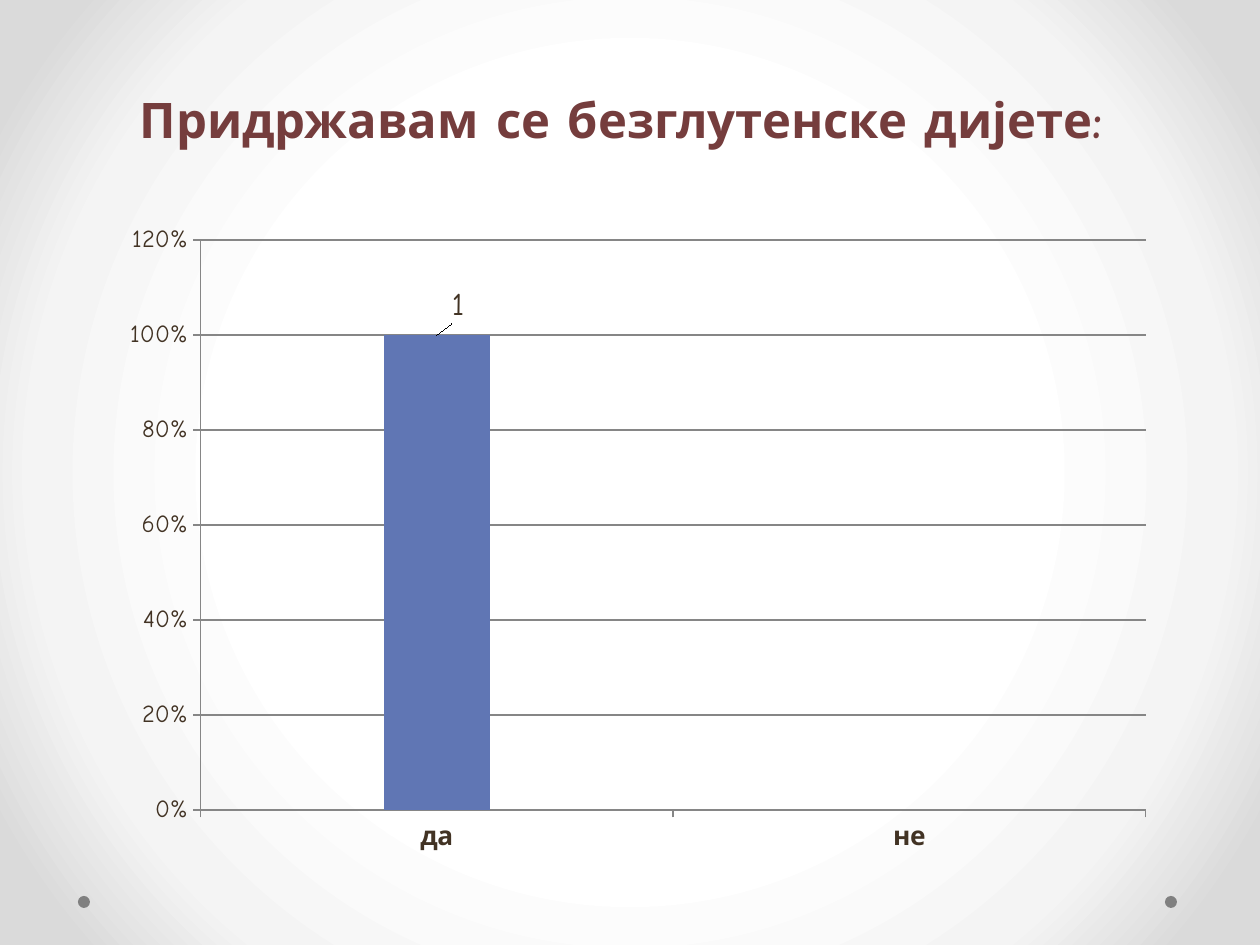
"""Build the slide on keeping a gluten-free diet, with its column chart."""
from dataclasses import dataclass
from lxml.etree import SubElement
from pptx import Presentation
from pptx.chart.data import CategoryChartData
from pptx.dml.color import RGBColor
from pptx.enum.chart import XL_CHART_TYPE, XL_LABEL_POSITION, XL_TICK_MARK
from pptx.enum.shapes import MSO_SHAPE
from pptx.enum.text import MSO_ANCHOR, PP_ALIGN
from pptx.oxml.ns import qn
from pptx.util import Emu, Pt


@dataclass(frozen=True)
class Theme:
    font: str = "Comic Neue"
    chart_font: str = "Vollkorn"
    title: str = "753D3D"
    text: str = "423324"
    chart_text: str = "000000"
    bar: str = "6076B4"
    line: str = "868686"
    dot: str = "808080"
    backdrop: tuple = ((50, "FFFFFF"), (76, "F4F4F4"), (92, "DADADA"))
    title_size: int = 28
    label_size: int = 18
    category_size: int = 15
    value_size: int = 14


def px(length):
    return Emu(round(length * 914400 / 126))


def style(font, size, color, name=Theme.font, bold=False):
    font.name, font.size, font.bold = name, Pt(size), bold
    font.color.rgb = RGBColor.from_string(color)


theme = Theme()
deck = Presentation()
deck.slide_width, deck.slide_height = px(1260), px(945)
page = deck.slides.add_slide(deck.slide_layouts[6])

page.background.fill.gradient()
gradient = page.element.find(".//" + qn("a:gradFill"))
gradient.clear()
stops = SubElement(gradient, qn("a:gsLst"))
for position, color in theme.backdrop:
    stop = SubElement(stops, qn("a:gs"), pos=str(position * 1000))
    SubElement(stop, qn("a:srgbClr"), val=color)
circle = SubElement(gradient, qn("a:path"), path="circle")
SubElement(circle, qn("a:fillToRect"), {side: "50000" for side in "ltrb"})

for left in (1165, 78):
    dot = page.shapes.add_shape(MSO_SHAPE.OVAL, px(left), px(896), px(12), px(12))
    dot.shadow.inherit = False
    dot.fill.solid()
    dot.fill.fore_color.rgb = RGBColor.from_string(theme.dot)
    dot.line.fill.background()

title = page.shapes.add_textbox(px(54), px(45), px(1134), px(110))
title.text_frame.word_wrap = True
title.text_frame.vertical_anchor = MSO_ANCHOR.BOTTOM
title.text_frame.text = "Придржавам се безглутенске дијете:"
para = title.text_frame.paragraphs[0]
para.alignment = PP_ALIGN.CENTER
style(para.runs[0].font, theme.title_size, theme.title, bold=True)

answers = CategoryChartData()
answers.categories = ["да", "не"]
answers.add_series("Series 1", [1, None])
chart = page.shapes.add_chart(
    XL_CHART_TYPE.COLUMN_CLUSTERED, px(105), px(214), px(1062), px(655), answers
).chart
chart.has_legend = False
chart.has_title = False
style(chart.font, theme.label_size, theme.chart_text, theme.chart_font)

plot = chart.plots[0]
plot.gap_width = 348
plot.vary_by_categories = False
series = plot.series[0]
series.format.fill.solid()
series.format.fill.fore_color.rgb = RGBColor.from_string(theme.bar)
labels = series.data_labels
labels.show_value = True
labels.position = XL_LABEL_POSITION.OUTSIDE_END
style(labels.font, theme.label_size, theme.text)

point_label = series.points[0].data_label
point_label.position = XL_LABEL_POSITION.OUTSIDE_END
style(point_label.font, theme.label_size, theme.text)
label_layout = SubElement(series.points[0].data_label.font and labels._element.find(qn("c:dLbl")), qn("c:layout"))
label_layout.getparent().find(qn("c:idx")).addnext(label_layout)
label_place = SubElement(label_layout, qn("c:manualLayout"))
for name, value in (("x", 0.02), ("y", -0.01)):
    SubElement(label_place, qn(f"c:{name}"), val=str(value))

plot_area = chart.element.find(".//" + qn("c:plotArea"))
plot_layout = plot_area.find(qn("c:layout"))
if plot_layout is None:
    plot_layout = SubElement(plot_area, qn("c:layout"))
    plot_area.insert(0, plot_layout)
plot_place = SubElement(plot_layout, qn("c:manualLayout"))
for name, value in (
    ("layoutTarget", "inner"), ("xMode", "edge"), ("yMode", "edge"),
    ("x", 0.09), ("y", 0.04), ("w", 0.89), ("h", 0.87),
):
    SubElement(plot_place, qn(f"c:{name}"), val=str(value))

for axis, size, bold in (
    (chart.category_axis, theme.category_size, True),
    (chart.value_axis, theme.value_size, False),
):
    axis.major_tick_mark = XL_TICK_MARK.OUTSIDE
    axis.minor_tick_mark = XL_TICK_MARK.NONE
    axis.format.line.color.rgb = RGBColor.from_string(theme.line)
    style(axis.tick_labels.font, size, theme.text, bold=bold)

value_axis = chart.value_axis
value_axis.minimum_scale, value_axis.maximum_scale, value_axis.major_unit = 0, 1.2, 0.2
value_axis.tick_labels.number_format = "0%"
value_axis.tick_labels.number_format_is_linked = False
value_axis.has_major_gridlines = True
value_axis.major_gridlines.format.line.color.rgb = RGBColor.from_string(theme.line)

deck.save("out.pptx")
